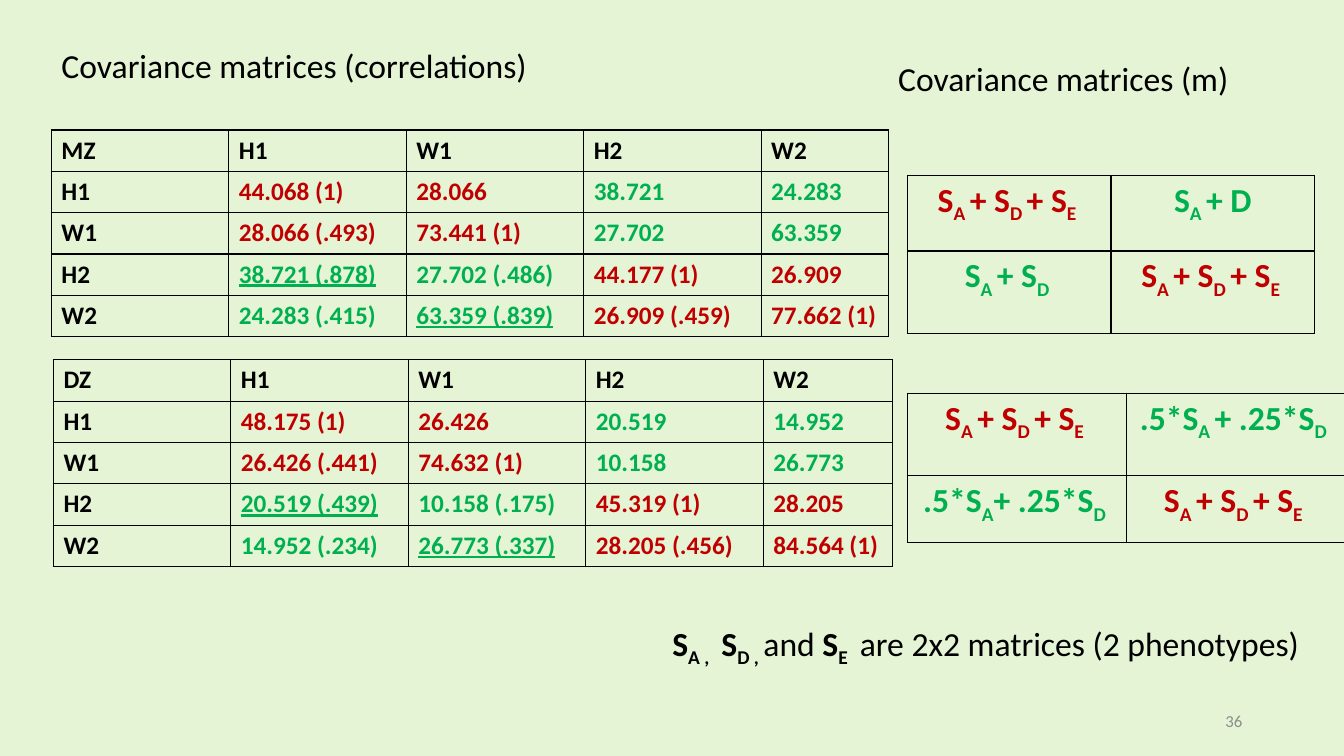
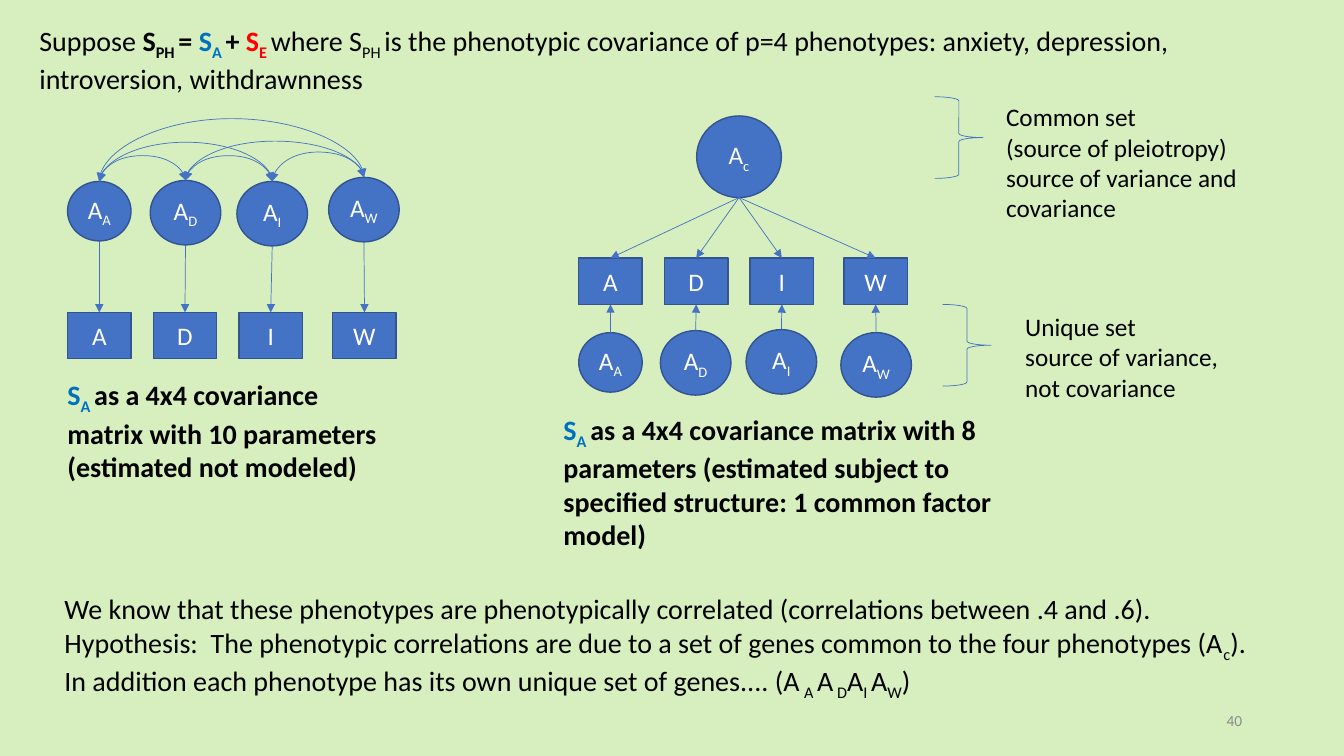
import dataclasses
import itertools
import typing

import pptx
import pptx.dml.color
import pptx.enum.shapes
import pptx.enum.text
import pptx.oxml
import pptx.oxml.ns
import pptx.util
from lxml import etree

PX = 9144  # EMU per px, 100 px to the inch
SLIDE_SIZE = (1333, 750)
TITLE_ONLY = 5
TOP, BOTTOM = 0, 2

ALIGN = pptx.enum.text.PP_ALIGN
ANCHOR = pptx.enum.text.MSO_ANCHOR
SHAPE = pptx.enum.shapes.MSO_SHAPE
CONNECTOR = pptx.enum.shapes.MSO_CONNECTOR
qn = pptx.oxml.ns.qn
rgb = pptx.dml.color.RGBColor.from_string


@dataclasses.dataclass(frozen=True)
class Theme:
    font: str = "Calibri"
    text: typing.Any = rgb("000000")
    muted: typing.Any = rgb("8C8C8C")
    within_twin: typing.Any = rgb("C00000")
    cross_twin: typing.Any = rgb("00B050")
    genetic: typing.Any = rgb("0070C0")
    environment: typing.Any = rgb("FF0000")
    node: typing.Any = rgb("4472C4")
    node_edge: typing.Any = rgb("325491")
    node_text: typing.Any = rgb("FFFFFF")
    light_green: typing.Any = rgb("E5F4D5")
    mid_green: typing.Any = rgb("D7EEBE")
    heading: int = 24
    body: int = 20
    label: int = 18
    thin: float = 0.5
    edge: float = 1


THEME = Theme()


@dataclasses.dataclass(frozen=True)
class Segment:
    """A stretch of text in one style; [brackets] hold subscripts."""
    markup: str
    color: typing.Any = None
    bold: typing.Any = None
    underline: bool = False


MZ = """MZ|H1|W1|H2|W2
H1|44.068 (1)|28.066|38.721|24.283
W1|28.066 (.493)|73.441 (1)|27.702|63.359
H2|38.721 (.878)|27.702 (.486)|44.177 (1)|26.909
W2|24.283 (.415)|63.359 (.839)|26.909 (.459)|77.662 (1)"""

DZ = """DZ|H1|W1|H2|W2
H1|48.175 (1)|26.426|20.519|14.952
W1|26.426 (.441)|74.632 (1)|10.158|26.773
H2|20.519 (.439)|10.158 (.175)|45.319 (1)|28.205
W2|14.952 (.234)|26.773 (.337)|28.205 (.456)|84.564 (1)"""

TOTAL = "S[A ]+ S[D ]+ S[E ]"
MZ_MODEL = [[TOTAL, "S[A ]+ D"], ["S[A ]+ S[D ]", TOTAL]]
DZ_MODEL = [[TOTAL, ".5*S[A ]+ .25*S[D ]"], [".5*S[A]+ .25*S[D ]", TOTAL]]

PHENOTYPES = "ADIW"
PHENOTYPE_OFFSETS = (0, 85, 170, 263)


def px(*lengths):
    return [pptx.util.Emu(length * PX) for length in lengths]


def write(frame, paragraphs, size, color=THEME.text, bold=False, align=ALIGN.LEFT):
    """Fill a text frame; a paragraph is a string or a list of segments."""
    for index, content in enumerate(paragraphs):
        paragraph = frame.add_paragraph() if index else frame.paragraphs[0]
        paragraph.alignment = align
        segments = [Segment(content)] if isinstance(content, str) else content
        for segment in segments:
            pieces = segment.markup.replace("]", "[").split("[")
            for position, piece in enumerate(pieces):
                if not piece:
                    continue
                run = paragraph.add_run()
                run.text = piece
                font = run.font
                font.name, font.size = THEME.font, pptx.util.Pt(size)
                font.color.rgb = segment.color or color
                font.bold = bold if segment.bold is None else segment.bold
                font.underline = segment.underline
                if position % 2:
                    run._r.get_or_add_rPr().set("baseline", "-25000")


def text_box(slide, box, paragraphs, size, anchor=ANCHOR.TOP, **style):
    frame = slide.shapes.add_textbox(*px(*box)).text_frame
    frame.word_wrap = True
    frame.vertical_anchor = anchor
    write(frame, paragraphs, size, **style)


def new_slide(deck, background, title_box, title, title_size, number, number_size):
    slide = deck.slides.add_slide(deck.slide_layouts[TITLE_ONLY])
    slide.background.fill.solid()
    slide.background.fill.fore_color.rgb = background
    heading = slide.shapes.title
    heading.left, heading.top, heading.width, heading.height = px(*title_box)
    frame = heading.text_frame
    frame.word_wrap = True
    frame.auto_size = pptx.enum.text.MSO_AUTO_SIZE.NONE
    frame.vertical_anchor = ANCHOR.TOP
    write(frame, [title], title_size)
    text_box(slide, (942, 695, 300, 40), [number], number_size,
             anchor=ANCHOR.MIDDLE, color=THEME.muted, align=ALIGN.RIGHT)
    return slide


def outline_cell(cell):
    cell.fill.background()
    properties = cell._tc.get_or_add_tcPr()
    for index, side in enumerate(("lnL", "lnR", "lnT", "lnB")):
        border = etree.Element(qn(f"a:{side}"), w=str(pptx.util.Pt(THEME.edge)))
        fill = etree.SubElement(border, qn("a:solidFill"))
        etree.SubElement(fill, qn("a:srgbClr"), val=str(THEME.text))
        properties.insert(index, border)


def bordered_table(slide, corner, widths, heights, rows, size, align):
    """Draw a table from rows of segments."""
    box = (*corner, sum(widths), sum(heights))
    table = slide.shapes.add_table(len(heights), len(widths), *px(*box)).table
    table.first_row = table.horz_banding = False
    for column, width in zip(table.columns, px(*widths)):
        column.width = width
    for row, height in zip(table.rows, px(*heights)):
        row.height = height
    for r, segments in enumerate(rows):
        for c, segment in enumerate(segments):
            cell = table.cell(r, c)
            outline_cell(cell)
            write(cell.text_frame, [[segment]], size, bold=True, align=align)


def twin_color(same_twin):
    return THEME.within_twin if same_twin else THEME.cross_twin


def covariance_table(slide, corner, last_width, data):
    def segment(r, c, value):
        if r == 0 or c == 0:
            return Segment(value)
        same_twin = (r - 1) // 2 == (c - 1) // 2
        return Segment(value, twin_color(same_twin), underline=r - c == 2)

    rows = [[segment(r, c, value) for c, value in enumerate(line.split("|"))]
            for r, line in enumerate(data.splitlines())]
    bordered_table(slide, corner, [176] * 4 + [last_width], [41] * 5, rows,
                   THEME.label, ALIGN.LEFT)


def model_table(slide, corner, width, heights, model):
    rows = [[Segment(markup, twin_color(r == c)) for c, markup in enumerate(line)]
            for r, line in enumerate(model)]
    bordered_table(slide, corner, [width] * 2, heights, rows,
                   THEME.heading, ALIGN.CENTER)


def node(slide, kind, box, label):
    shape = slide.shapes.add_shape(kind, *px(*box))
    shape.shadow.inherit = False
    shape.fill.solid()
    shape.fill.fore_color.rgb = THEME.node
    shape.line.color.rgb = THEME.node_edge
    shape.line.width = pptx.util.Pt(THEME.edge)
    frame = shape.text_frame
    frame.vertical_anchor = ANCHOR.MIDDLE
    write(frame, [label], THEME.label, color=THEME.node_text, align=ALIGN.CENTER)
    return shape


def phenotype_boxes(slide, left, top):
    return [node(slide, SHAPE.RECTANGLE, (left + offset, top, 63, 46), name)
            for name, offset in zip(PHENOTYPES, PHENOTYPE_OFFSETS)]


def gene_circles(slide, corners):
    """Draw one circle per phenotype; the first is a little smaller."""
    sizes = [(63, 59)] + [(70, 64)] * 3
    return [node(slide, SHAPE.OVAL, corner + size, f"A[{name}]")
            for name, corner, size in zip(PHENOTYPES, corners, sizes)]


def middle(shape):
    return shape.left + shape.width // 2


def finish_connector(connector, ends):
    connector.line.color.rgb = THEME.node
    connector.line.width = pptx.util.Pt(THEME.thin)
    for end in ends:
        etree.SubElement(connector.line._get_or_add_ln(), qn(f"a:{end}"), type="triangle")
    etree.SubElement(connector._element.spPr, qn("a:effectLst"))


def arrow(slide, circle, box, side):
    """Point from a circle to the given side of a phenotype box."""
    x = middle(circle)
    y = circle.top if side == BOTTOM else circle.top + circle.height
    connector = slide.shapes.add_connector(CONNECTOR.STRAIGHT, x, y, x, y)
    connector.end_connect(box, side)
    finish_connector(connector, ["tailEnd"])


def correlation_arc(slide, first, second, peak):
    """Join the tops of two circles by a double-headed arc up to peak (px)."""
    x1, x2 = middle(first), middle(second)
    connector = slide.shapes.add_connector(CONNECTOR.CURVE, x1, first.top, x2, second.top)
    connector.begin_connect(first, TOP)
    connector.end_connect(second, TOP)
    rise = first.top - second.top or PX
    # The curve leaves sideways in its own frame, so the frame is turned upright.
    width, height = abs(rise), x2 - x1
    connector.left = (x1 + x2 - width) // 2
    connector.top = (first.top + second.top - height) // 2
    connector.width, connector.height = width, height
    frame = connector._element.spPr.xfrm
    frame.set("rot", "5400000" if rise > 0 else "16200000")
    frame.set("flipH", "1")
    frame.set("flipV", "1" if rise > 0 else "0")
    bend = round((first.top - peak * PX) / rise * 100000)
    guides = connector._element.spPr.find(qn("a:prstGeom")).find(qn("a:avLst"))
    etree.SubElement(guides, qn("a:gd"), name="adj1", fmla=f"val {bend}")
    finish_connector(connector, ["headEnd", "tailEnd"])


def brace(slide, left, top):
    shape = slide.shapes.add_shape(SHAPE.RIGHT_BRACE, *px(left, top, 48, 81))
    shape.shadow.inherit = False
    shape.fill.background()
    shape.line.color.rgb = THEME.node
    shape.line.width = pptx.util.Pt(THEME.thin)


def covariance_slide(deck):
    slide = new_slide(deck, THEME.light_green, (51, 40, 494, 50),
                      "Covariance matrices (correlations)", THEME.heading, "36", 12)
    text_box(slide, (881, 53, 358, 50), ["Covariance matrices (m)"], THEME.heading)
    covariance_table(slide, (51, 129), 126, MZ)
    covariance_table(slide, (53, 357), 128, DZ)
    model_table(slide, (900, 174), 202, [75, 82], MZ_MODEL)
    model_table(slide, (900, 390), 217, [82, 66], DZ_MODEL)
    note = [Segment("S[A , ] S[D , ]", bold=True), Segment("and "),
            Segment("S[E ]", bold=True), Segment(" are 2x2 matrices (2 phenotypes)")]
    text_box(slide, (657, 613, 667, 50), [note], THEME.heading)


def estimated_model(slide):
    boxes = phenotype_boxes(slide, 67, 310)
    circles = gene_circles(slide, [(67, 180), (149, 179), (235, 180), (326, 176)])
    for circle, box in zip(circles, boxes):
        arrow(slide, circle, box, TOP)
    peaks = (154, 140, 118, 154, 140, 151)
    for (first, second), peak in zip(itertools.combinations(circles, 2), peaks):
        correlation_arc(slide, first, second, peak)
    caption = [Segment("S[A ]", THEME.genetic),
               Segment("as a 4x4 covariance matrix with 10 parameters")]
    text_box(slide, (57, 370, 328, 111), [caption, "(estimated not modeled)"],
             THEME.body, bold=True)


def common_factor_model(slide):
    common = node(slide, SHAPE.OVAL, (691, 115, 84, 81), "A[c]")
    boxes = phenotype_boxes(slide, 574, 256)
    circles = gene_circles(slide, [(574, 330), (655, 328), (740, 327), (834, 330)])
    for circle, box in zip(circles, boxes):
        arrow(slide, common, box, TOP)
        arrow(slide, circle, box, BOTTOM)
    caption = [Segment("S[A ]", THEME.genetic),
               Segment("as a 4x4 covariance matrix with 8 parameters (estimated subject "
                       "to specified structure: 1 common factor model)")]
    text_box(slide, (549, 404, 450, 145), [caption], THEME.body, bold=True)
    brace(slide, 927, 96)
    text_box(slide, (988, 96, 258, 131),
             ["Common set", "(source of pleiotropy)", "source of variance and", "covariance"],
             THEME.label)
    brace(slide, 935, 302)
    text_box(slide, (1007, 304, 219, 101),
             ["Unique set", "source of variance,", "not covariance"], THEME.label)


def pleiotropy_slide(deck):
    title = [Segment("Suppose"), Segment(" S[PH ]= ", bold=True),
             Segment("S[A ]", THEME.genetic, True), Segment("+ ", bold=True),
             Segment("S[E ]", THEME.environment, True),
             Segment("where S[PH ]is the phenotypic covariance of p=4 phenotypes: "
                     "anxiety, depression, introversion, withdrawnness")]
    slide = new_slide(deck, THEME.mid_green, (29, 18, 1161, 77), title, THEME.body, "40", 11)
    estimated_model(slide)
    common_factor_model(slide)
    text_box(slide, (54, 582, 1272, 111), [
        "We know that these phenotypes are phenotypically correlated "
        "(correlations between .4 and .6).",
        "Hypothesis:  The phenotypic correlations are due to a set of genes "
        "common to the four phenotypes (A[c]).",
        "In addition each phenotype has its own unique set of genes.... "
        "(A[ A ]A[ D]A[I ]A[W])",
    ], THEME.body)


def main():
    deck = pptx.Presentation()
    deck.slide_width, deck.slide_height = px(*SLIDE_SIZE)
    covariance_slide(deck)
    pleiotropy_slide(deck)
    deck.save("out.pptx")


if __name__ == "__main__":
    main()
